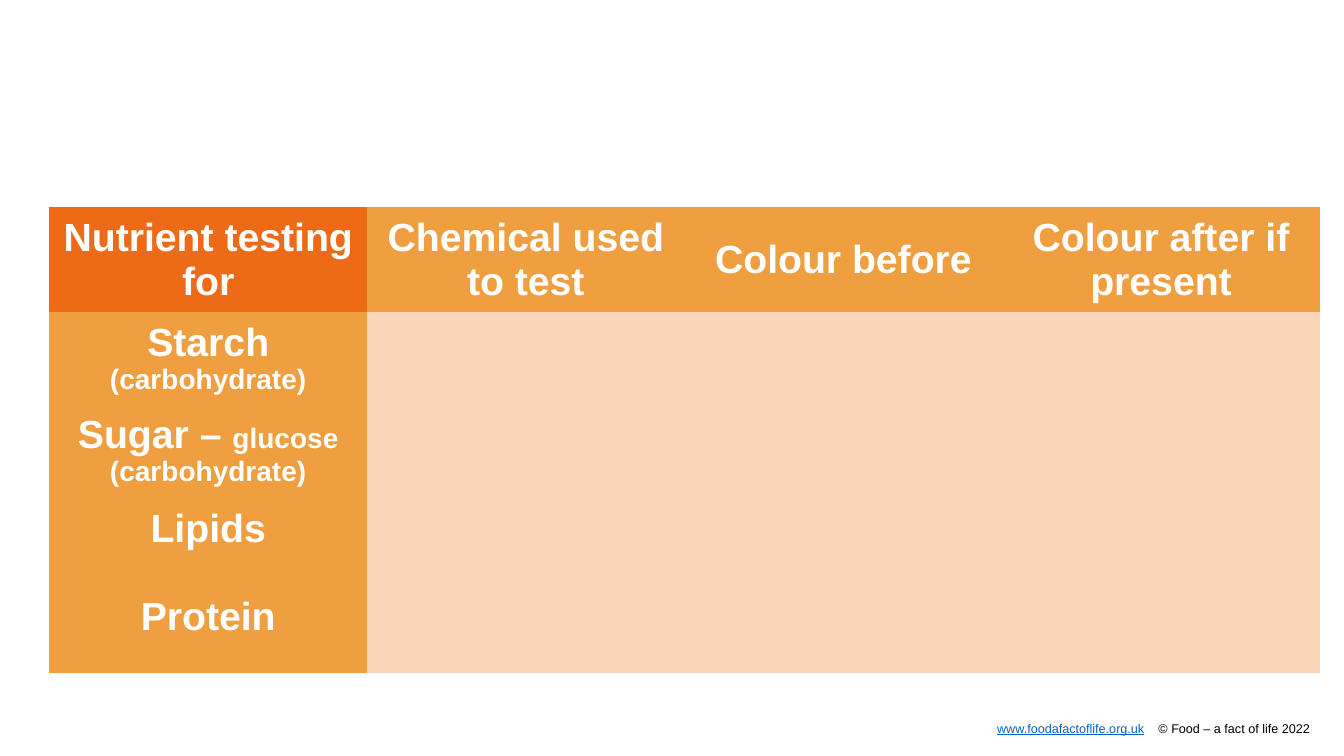
from dataclasses import dataclass

from lxml import etree
from pptx import Presentation
from pptx.dml.color import RGBColor
from pptx.enum.text import MSO_ANCHOR, PP_ALIGN
from pptx.oxml.ns import qn
from pptx.util import Inches, Pt

CENTER = PP_ALIGN.CENTER
MIDDLE = MSO_ANCHOR.MIDDLE
FONT = "Arial"
PLAIN_TABLE_STYLE = "{2D5ABB26-0587-4C30-8999-92F81FD0307C}"
COLORS = {
    "corner": "ED6B17",
    "heading": "EF9F3F",
    "answer": "F9D4B6",
    "white": "FFFFFF",
    "link": "0563C1",
    "black": "000000",
}


@dataclass(frozen=True)
class Span:
    text: str
    size: int = 28
    color: str = "white"
    bold: bool = True
    underline: bool = False


@dataclass(frozen=True)
class NutrientRow:
    height: float
    label: tuple[Span, ...]


HEADER_HEIGHT = 1.05
COLUMN_WIDTH = 3.15
HEADINGS = (
    "Nutrient testing for",
    "Chemical used to test",
    "Colour before",
    "Colour after if present",
)
NUTRIENTS = (
    NutrientRow(0.91, (Span("Starch "), Span("(carbohydrate)", 20))),
    NutrientRow(0.91, (Span("Sugar – "), Span("glucose (carbohydrate)", 20))),
    NutrientRow(0.65, (Span("Lipids"),)),
    NutrientRow(1.11, (Span("Protein"),)),
)
FOOTER = (
    Span("www.foodafactoflife.org.uk", 9, "link", False, True),
    Span("\t© Food – a fact of life 2022", 9, "black", False),
)


def color_of(name: str) -> RGBColor:
    return RGBColor.from_string(COLORS[name])


def add_spans(para, spans: tuple[Span, ...]) -> None:
    for span in spans:
        run = para.add_run()
        run.text = span.text
        run.font.name = FONT
        run.font.size = Pt(span.size)
        run.font.bold = span.bold
        run.font.underline = span.underline
        run.font.color.rgb = color_of(span.color)


def fill_cell(cell, fill: str, spans: tuple[Span, ...] = ()) -> None:
    cell.fill.solid()
    cell.fill.fore_color.rgb = color_of(fill)
    cell.vertical_anchor = MIDDLE
    para = cell.text_frame.paragraphs[0]
    para.alignment = CENTER
    add_spans(para, spans)


def add_nutrient_table(page) -> None:
    heights = [HEADER_HEIGHT] + [row.height for row in NUTRIENTS]
    frame = page.shapes.add_table(
        len(heights), len(HEADINGS), Inches(0.49), Inches(2.05),
        Inches(COLUMN_WIDTH * len(HEADINGS)), Inches(sum(heights)))
    table = frame.table
    table.first_row = False
    table.horz_banding = False
    frame._element.find(".//" + qn("a:tableStyleId")).text = PLAIN_TABLE_STYLE
    for column in table.columns:
        column.width = Inches(COLUMN_WIDTH)
    for row, height in zip(table.rows, heights):
        row.height = Inches(height)

    # Column headings
    for index, heading in enumerate(HEADINGS):
        fill = "heading" if index else "corner"
        fill_cell(table.cell(0, index), fill, (Span(heading),))

    # Nutrient labels and empty answer cells
    for index, nutrient in enumerate(NUTRIENTS, start=1):
        fill_cell(table.cell(index, 0), "heading", nutrient.label)
        for column in range(1, len(HEADINGS)):
            fill_cell(table.cell(index, column), "answer")


def add_footer(page) -> None:
    box = page.shapes.add_textbox(
        Inches(9.89), Inches(7.15), Inches(3.2), Inches(0.15))
    text = box.text_frame
    text.word_wrap = True
    text.margin_left = text.margin_right = 0
    text.margin_top = text.margin_bottom = 0
    para = text.paragraphs[0]
    # Tab stop separating the link from the copyright line
    tabs = etree.SubElement(para._p.get_or_add_pPr(), qn("a:tabLst"))
    etree.SubElement(tabs, qn("a:tab"), pos=str(Inches(1.6)), algn="l")
    add_spans(para, FOOTER)


def main() -> None:
    deck = Presentation()
    deck.slide_width = Inches(13.33)
    deck.slide_height = Inches(7.5)
    page = deck.slides.add_slide(deck.slide_layouts[6])
    add_nutrient_table(page)
    add_footer(page)
    deck.save("out.pptx")


if __name__ == "__main__":
    main()
